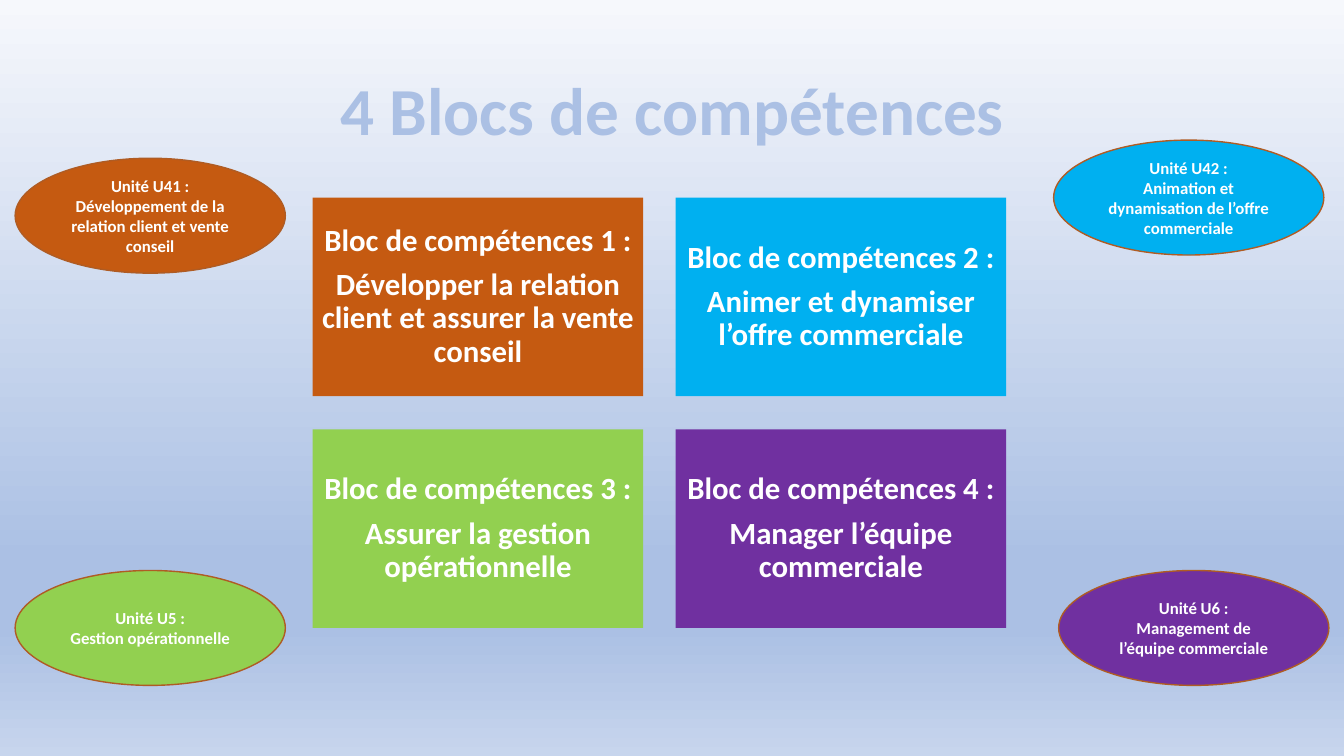
from lxml.etree import SubElement
from pptx import Presentation
from pptx.dml.color import RGBColor
from pptx.enum.shapes import MSO_SHAPE
from pptx.enum.text import MSO_ANCHOR, PP_ALIGN
from pptx.oxml.ns import qn
from pptx.util import Inches, Pt

COLORS = {
    "orange": "C55A11", "blue": "00B0F0", "green": "92D050", "purple": "7030A0",
    "outline": "AF5C24", "white": "FFFFFF", "title": "ABC0E4",
}
BACKGROUND = [(0, "F6F8FC"), (74, "ABC0E4"), (83, "ABC0E4"), (100, "C7D5ED")]
FONT = "Calibri"
TITLE = "4 Blocs de compétences"
BLOCKS = [
    ("orange", "Développer la relation client et assurer la vente conseil"),
    ("blue", "Animer et dynamiser l’offre commerciale"),
    ("green", "Assurer la gestion opérationnelle"),
    ("purple", "Manager l’équipe commerciale"),
]
UNITS = [
    ("orange", 0.15, 1.57, ["Unité U41 : Développement de la relation client et vente conseil"]),
    ("purple", 10.5, 5.66, ["Unité U6 :", "Management de l’équipe commerciale"]),
    ("green", 0.15, 5.66, ["Unité U5 :", "Gestion opérationnelle"]),
    ("blue", 10.45, 1.39, ["Unité U42 :", "Animation et dynamisation de l’offre commerciale"]),
]
BLOCK_LEFT, BLOCK_TOP, BLOCK_W, BLOCK_H = 3.1, 1.96, 3.28, 1.97
STEP_X, STEP_Y = 3.6, 2.3
UNIT_W, UNIT_H = 2.68, 1.14


def rgb(name):
    return RGBColor.from_string(COLORS[name])


def write(sp, lines, size, color="white", spacing=None, after=None):
    tf = sp.text_frame
    tf.word_wrap = True
    tf.vertical_anchor = MSO_ANCHOR.MIDDLE
    for i, line in enumerate(lines):
        p = tf.add_paragraph() if i else tf.paragraphs[0]
        p.text = line
        p.alignment = PP_ALIGN.CENTER
        p.line_spacing = spacing
        p.space_after = after
        p.font.name = FONT
        p.font.size = Pt(size)
        p.font.bold = True
        p.font.color.rgb = rgb(color)
    return tf


def add_shape(s, kind, left, top, width, height, color):
    sp = s.shapes.add_shape(kind, Inches(left), Inches(top), Inches(width), Inches(height))
    sp.shadow.inherit = False
    sp.fill.solid()
    sp.fill.fore_color.rgb = rgb(color)
    return sp


def set_background(s):
    fill = s.background.fill
    fill.gradient()
    fill.gradient_angle = 270
    stops = s.element.find(".//" + qn("a:gsLst"))
    for stop in list(stops):
        stops.remove(stop)
    for pos, color in BACKGROUND:
        stop = SubElement(stops, qn("a:gs"), pos=str(pos * 1000))
        SubElement(stop, qn("a:srgbClr"), val=color)


def main():
    prs = Presentation()
    prs.slide_width, prs.slide_height = Inches(13.33), Inches(7.5)
    s = prs.slides.add_slide(prs.slide_layouts[6])
    set_background(s)

    title = s.shapes.add_textbox(Inches(0.92), Inches(0.4), Inches(11.5), Inches(1.45))
    write(title, [TITLE], 48, "title", 0.9)

    for i, (color, text) in enumerate(BLOCKS):
        row, col = divmod(i, 2)
        sp = add_shape(s, MSO_SHAPE.RECTANGLE, BLOCK_LEFT + col * STEP_X,
                       BLOCK_TOP + row * STEP_Y, BLOCK_W, BLOCK_H, color)
        sp.line.fill.background()
        tf = write(sp, [f"Bloc de compétences {i + 1} :", text], 22, spacing=0.9, after=Pt(7.7))
        tf.margin_left = tf.margin_right = tf.margin_top = tf.margin_bottom = Inches(0.09)

    for color, left, top, lines in UNITS:
        sp = add_shape(s, MSO_SHAPE.OVAL, left, top, UNIT_W, UNIT_H, color)
        sp.line.color.rgb = rgb("outline")
        sp.line.width = Pt(1)
        write(sp, lines, 12)

    prs.save("out.pptx")


if __name__ == "__main__":
    main()
